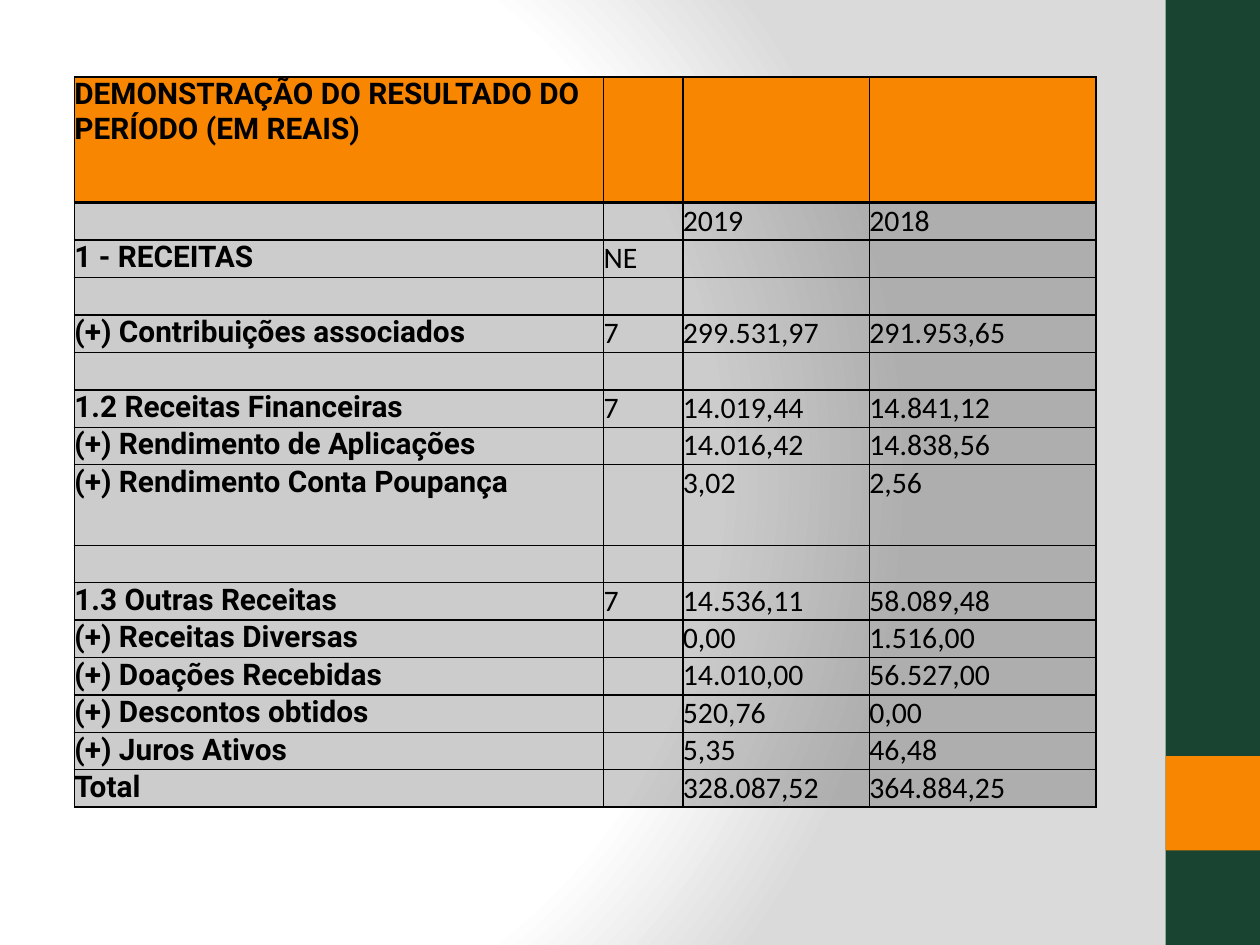
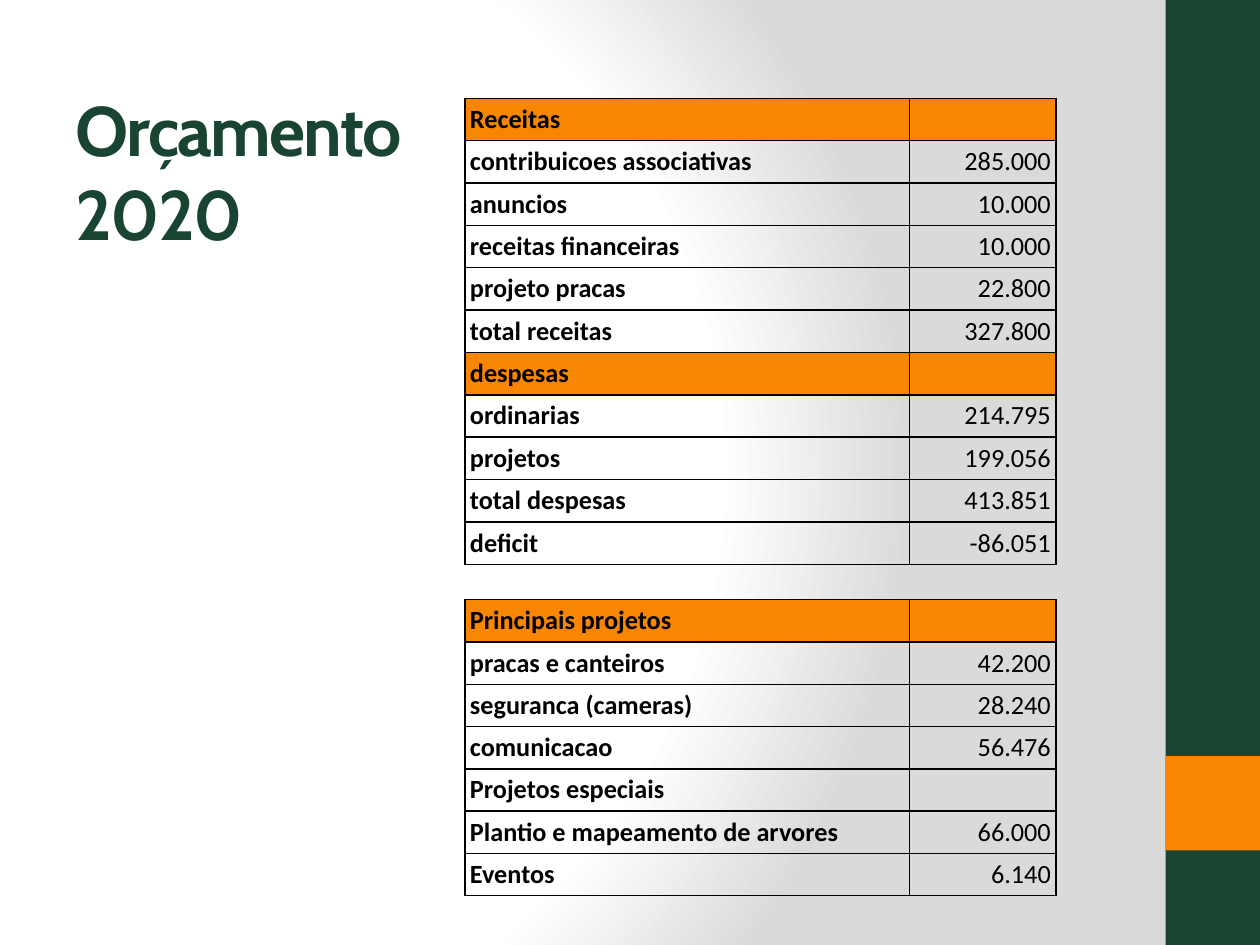
from lxml.etree import SubElement
from pptx import Presentation
from pptx.dml.color import RGBColor
from pptx.enum.shapes import MSO_SHAPE
from pptx.enum.text import MSO_ANCHOR, MSO_AUTO_SIZE, PP_ALIGN
from pptx.oxml import parse_xml
from pptx.oxml.ns import nsdecls, qn
from pptx.util import Inches, Pt

GREEN, ORANGE, BLACK = "194431", "F88600", "000000"


def paint(fill, color, alpha=None):
    fill.solid()
    fill.fore_color.rgb = RGBColor.from_string(color)
    if alpha is not None:
        clr = fill._xPr.find(qn("a:solidFill") + "/" + qn("a:srgbClr"))
        SubElement(clr, qn("a:alpha"), val=str(alpha * 1000))


def put_text(tf, text, size, font, color=BLACK, bold=False, align=PP_ALIGN.LEFT, spacing=0):
    p = tf.paragraphs[0]
    p.alignment = align
    if not text:
        # An empty cell keeps the text size so its row does not grow
        SubElement(p._p, qn("a:endParaRPr"), sz=str(size * 100))
        return
    r = p.add_run()
    r.text = text
    r.font.size, r.font.name, r.font.bold = Pt(size), font, bold
    paint(r.font.fill, color)
    if spacing:
        r._r.get_or_add_rPr().set("spc", str(spacing * 100))


prs = Presentation()
prs.slide_width, prs.slide_height = Inches(10), Inches(7.5)

# Shared background on the master
stops = "".join(f'<a:gs pos="{pos}000"><a:srgbClr val="{color}"/></a:gs>'
                for pos, color in ((0, "FFFFFF"), (75, "FFFFFF"), (100, "DADADA")))
bg = parse_xml(
    f'<p:bg {nsdecls("p", "a")}><p:bgPr><a:gradFill rotWithShape="1"><a:gsLst>{stops}</a:gsLst>'
    '<a:path path="circle"><a:fillToRect l="20000" t="50000" r="100000" b="50000"/></a:path>'
    '</a:gradFill><a:effectLst/></p:bgPr></p:bg>')
cSld = prs.slide_master._element.cSld
for old in cSld.findall(qn("p:bg")):
    cSld.remove(old)
cSld.insert(0, bg)

# Slides with their side bands
result_slide = prs.slides.add_slide(prs.slide_layouts[6])
budget_slide = prs.slides.add_slide(prs.slide_layouts[5])
for s in (result_slide, budget_slide):
    for top, height, color in ((0, 7.5, GREEN), (6, 0.75, ORANGE)):
        sp = s.shapes.add_shape(MSO_SHAPE.RECTANGLE, Inches(9.25), Inches(top),
                                Inches(0.75), Inches(height))
        sp.shadow.inherit = False
        paint(sp.fill, color)
        sp.line.fill.background()

# Budget title
title = budget_slide.shapes.title
title.left, title.top = Inches(0.5), Inches(0.3)
title.width, title.height = Inches(2.96), Inches(2.11)
tf = title.text_frame
tf.word_wrap, tf.auto_size = True, MSO_AUTO_SIZE.NONE
tf.vertical_anchor = MSO_ANCHOR.MIDDLE
put_text(tf, "Orçamento 2020", 40, "Cabin", color=GREEN, bold=True, spacing=-1)

# Table contents
result_rows = [
    ("DEMONSTRAÇÃO DO RESULTADO DO PERÍODO (EM REAIS)", "", "", ""),
    ("", "", "2019", "2018"),
    ("1 - RECEITAS", "NE", "", ""),
    ("", "", "", ""),
    ("(+) Contribuições associados", "7", "299.531,97", "291.953,65"),
    ("", "", "", ""),
    ("1.2 Receitas Financeiras", "7", "14.019,44", "14.841,12"),
    ("(+) Rendimento de Aplicações", "", "14.016,42", "14.838,56"),
    ("(+) Rendimento Conta Poupança", "", "3,02", "2,56"),
    ("", "", "", ""),
    ("1.3 Outras Receitas", "7", "14.536,11", "58.089,48"),
    ("(+) Receitas Diversas", "", "0,00", "1.516,00"),
    ("(+) Doações Recebidas", "", "14.010,00", "56.527,00"),
    ("(+) Descontos obtidos", "", "520,76", "0,00"),
    ("(+) Juros Ativos", "", "5,35", "46,48"),
    ("Total", "", "328.087,52", "364.884,25"),
]
budget_rows = [
    ("Receitas", ""),
    ("contribuicoes associativas", "285.000"),
    ("anuncios", "10.000"),
    ("receitas financeiras", "10.000"),
    ("projeto pracas", "22.800"),
    ("total receitas", "327.800"),
    ("despesas", ""),
    ("ordinarias", "214.795"),
    ("projetos", "199.056"),
    ("total despesas", "413.851"),
    ("deficit", "-86.051"),
]
project_rows = [
    ("Principais projetos", ""),
    ("pracas e canteiros", "42.200"),
    ("seguranca (cameras)", "28.240"),
    ("comunicacao", "56.476"),
    ("Projetos especiais", ""),
    ("Plantio e mapeamento de arvores", "66.000"),
    ("Eventos", "6.140"),
]

# Table formats: tall rows have their own height, the others share the rest
result_style = dict(cols=(4.2, 0.63, 1.48, 1.8), tall={0: 1, 8: 0.64}, size=17,
                    label_font="Roboto", margin=0, anchor=MSO_ANCHOR.TOP,
                    align=PP_ALIGN.LEFT, shade=20, header_line=2)
budget_style = dict(cols=(3.53, 1.16), tall={}, size=15, label_font="Calibri",
                    margin=0.04, anchor=MSO_ANCHOR.MIDDLE, align=PP_ALIGN.RIGHT,
                    shade=None, header_line=1)
tables = [
    (result_slide, result_rows, 0.59, 0.61, 5.8, (0,), result_style),
    (budget_slide, budget_rows, 3.69, 0.78, 3.7, (0, 6), budget_style),
    (budget_slide, project_rows, 3.69, 4.76, 2.35, (0,), budget_style),
]

# Draw the tables
for s, rows, left, top, height, headers, style in tables:
    cols, tall = style["cols"], style["tall"]
    table = s.shapes.add_table(len(rows), len(cols), Inches(left), Inches(top),
                               Inches(sum(cols)), Inches(height)).table
    table.first_row = table.horz_banding = False
    for col, width in zip(table.columns, cols):
        col.width = Inches(width)
    row_height = (height - sum(tall.values())) / (len(rows) - len(tall))
    for i, row in enumerate(rows):
        table.rows[i].height = Inches(tall.get(i, row_height))
        for j, text in enumerate(row):
            cell = table.cell(i, j)
            cell.margin_left = cell.margin_right = Inches(style["margin"])
            cell.margin_top = cell.margin_bottom = Inches(style["margin"])
            cell.vertical_anchor = style["anchor"]
            # Borders come before the fill in the cell properties
            for side in ("L", "R", "T", "B"):
                under_header = (i, side) in ((0, "B"), (1, "T"))
                width = style["header_line"] if under_header else 1
                ln = SubElement(cell._tc.get_or_add_tcPr(), qn("a:ln" + side), w=str(Pt(width)))
                SubElement(SubElement(ln, qn("a:solidFill")), qn("a:srgbClr"), val=BLACK)
            if i in headers:
                paint(cell.fill, ORANGE)
            elif style["shade"]:
                paint(cell.fill, BLACK, alpha=style["shade"])
            else:
                cell.fill.background()
            put_text(cell.text_frame, text, style["size"],
                     "Calibri" if j else style["label_font"], bold=j == 0,
                     align=style["align"] if j else PP_ALIGN.LEFT)

prs.save("out.pptx")
